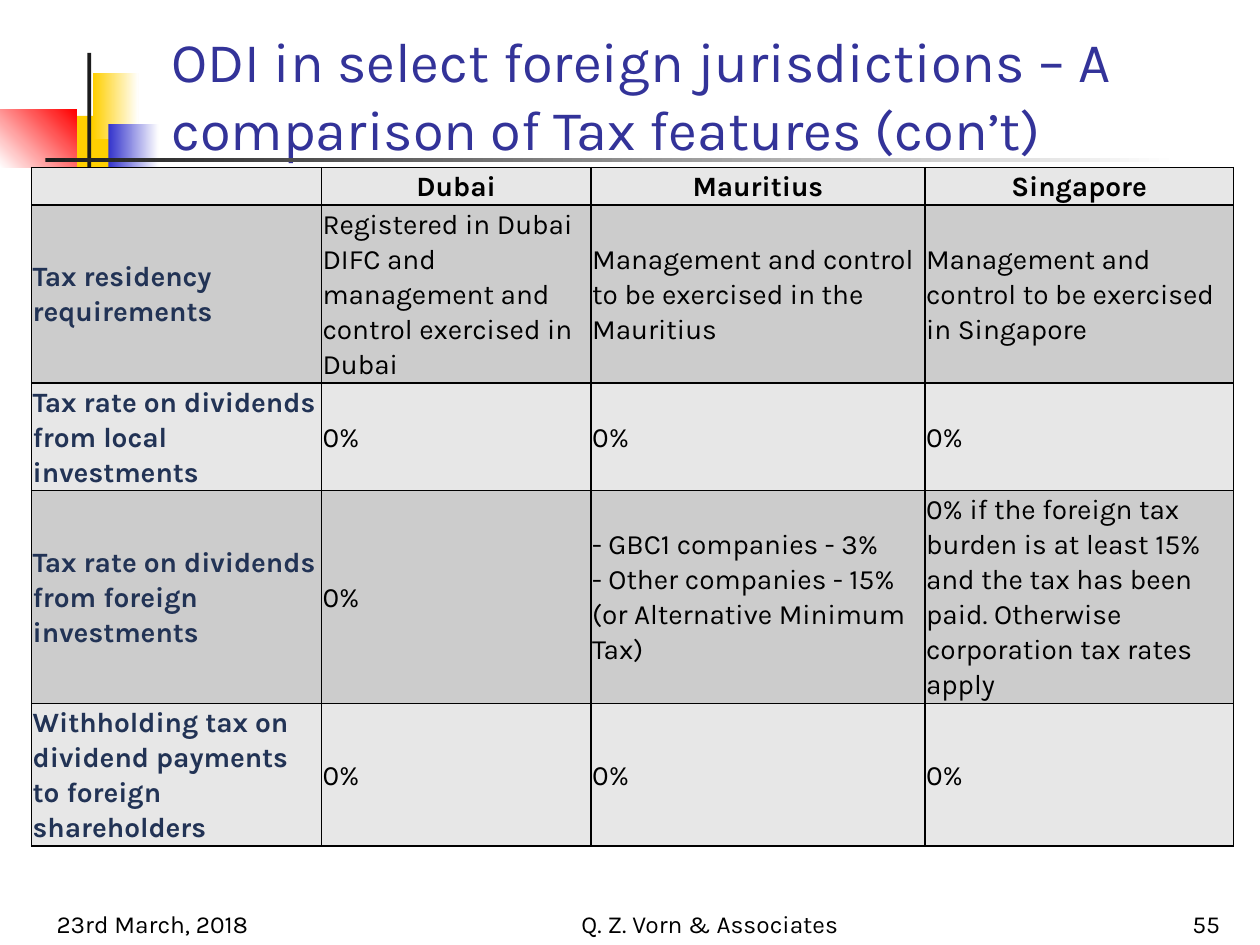
from lxml import etree
from pptx import Presentation
from pptx.dml.color import RGBColor
from pptx.enum.shapes import MSO_SHAPE
from pptx.enum.text import MSO_ANCHOR, MSO_AUTO_SIZE, PP_ALIGN
from pptx.oxml.ns import qn
from pptx.util import Pt

RECT = MSO_SHAPE.RECTANGLE
MIDDLE, BOTTOM = MSO_ANCHOR.MIDDLE, MSO_ANCHOR.BOTTOM
LEFT, CENTER, RIGHT = PP_ALIGN.LEFT, PP_ALIGN.CENTER, PP_ALIGN.RIGHT
NO_FIT = MSO_AUTO_SIZE.NONE

FONT = "Karla"
BLACK = RGBColor(0, 0, 0)
WHITE = RGBColor(255, 255, 255)
INK = RGBColor(0x1C, 0x1C, 0x1C)
YELLOW = RGBColor(0xFF, 0xCF, 0x01)
BLUE = RGBColor(0x33, 0x33, 0xCC)
RED = RGBColor(0xFF, 0, 0)
TITLE_BLUE = RGBColor(0x33, 0x33, 0x99)
NAVY = RGBColor(0x22, 0x33, 0x55)
LIGHT = RGBColor(0xE7, 0xE7, 0xE7)
GREY = RGBColor(0xCC, 0xCC, 0xCC)

TITLE = "ODI in select foreign jurisdictions – A comparison of Tax features (con’t)"
ROWS = [
    ("", "Dubai", "Mauritius", "Singapore"),
    ("Tax residency requirements",
     "Registered in Dubai DIFC and management and control exercised in Dubai",
     "Management and control to be exercised in the Mauritius",
     "Management and control to be exercised in Singapore"),
    ("Tax rate on dividends from local investments", "0%", "0%", "0%"),
    ("Tax rate on dividends from foreign investments",
     "0%",
     "- GBC1 companies - 3%\n- Other companies - 15% (or Alternative Minimum Tax)",
     "0% if the foreign tax burden is at least 15% and the tax has been paid. "
     "Otherwise corporation tax rates apply"),
    ("Withholding tax on dividend payments to foreign shareholders", "0%", "0%", "0%"),
]
COL_WIDTHS = [165.6, 154.1, 190.8, 176.4]
ROW_HEIGHTS = [21.2, 101.6, 61.5, 121.6, 81.5]

DECORATION = [
    ((33.1, 66.2, 34.6, 37.4), (YELLOW,), 0),
    ((42.5, 95.8, 33.1, 37.4), (BLUE,), 0),
    ((53.3, 41.8, 25.9, 37.4), (YELLOW, WHITE), 0),
    ((61.9, 70.6, 28.8, 37.4), (BLUE, WHITE), 0),
    ((0, 62.6, 43.9, 33.1), (WHITE, RED), 45),
    ((49.9, 30.2, 2.2, 82.8), (INK,), 0),
    ((25.9, 90, 648, 2.4), (INK, WHITE), 0),
]
FOOTER = [
    ("23rd March, 2018", 25.2, 149.8, LEFT),
    ("Q. Z. Vorn & Associates", 291.6, 228.2, CENTER),
    ("55", 554.4, 149.8, RIGHT),
]


def add_text(p, text, size, color, bold=False):
    for i, line in enumerate(text.split("\n")):
        if i:
            p.add_line_break()
        r = p.add_run()
        r.text = line
        r.font.name, r.font.size, r.font.bold = FONT, Pt(size), bold
        r.font.color.rgb = color


def add_borders(cell):
    tcPr = cell._tc.get_or_add_tcPr()
    for i, side in enumerate(("lnL", "lnR", "lnT", "lnB")):
        ln = etree.Element(qn("a:" + side), w=str(Pt(1)))
        fill = etree.SubElement(ln, qn("a:solidFill"))
        etree.SubElement(fill, qn("a:srgbClr"), val=str(BLACK))
        tcPr.insert(i, ln)


def add_decoration(s):
    for box, colors, angle in DECORATION:
        sp = s.shapes.add_shape(RECT, *map(Pt, box))
        sp.shadow.inherit = False
        sp.line.fill.background()
        if len(colors) == 1:
            sp.fill.solid()
            sp.fill.fore_color.rgb = colors[0]
        else:
            sp.fill.gradient()
            sp.fill.gradient_angle = angle
            for i, (stop, color) in enumerate(zip(sp.fill.gradient_stops, colors)):
                stop.position, stop.color.rgb = i, color


def add_title(s):
    sp = s.shapes.title
    sp.left, sp.top, sp.width, sp.height = Pt(90.7), Pt(16.6), Pt(613.4), Pt(79.2)
    tf = sp.text_frame
    tf.word_wrap, tf.auto_size, tf.vertical_anchor = True, NO_FIT, BOTTOM
    p = tf.paragraphs[0]
    p.alignment = LEFT
    add_text(p, TITLE, 32, TITLE_BLUE)


def add_table(s):
    table = s.shapes.add_table(len(ROWS), len(COL_WIDTHS), Pt(18), Pt(95.8),
                               Pt(sum(COL_WIDTHS)), Pt(sum(ROW_HEIGHTS))).table
    for col, width in zip(table.columns, COL_WIDTHS):
        col.width = Pt(width)
    for i, texts in enumerate(ROWS):
        table.rows[i].height = Pt(ROW_HEIGHTS[i])
        for j, text in enumerate(texts):
            cell = table.cell(i, j)
            cell.margin_left = cell.margin_right = Pt(0.72)
            cell.margin_top = cell.margin_bottom = Pt(0.72)
            cell.vertical_anchor = MIDDLE
            cell.fill.solid()
            cell.fill.fore_color.rgb = GREY if i % 2 else LIGHT
            add_borders(cell)
            p = cell.text_frame.paragraphs[0]
            p.alignment = LEFT if i else CENTER
            p.line_spacing = 1.07
            if text:
                add_text(p, text, 16, BLACK if j else NAVY, i == 0 or j == 0)
            else:
                etree.SubElement(p._p, qn("a:endParaRPr"), sz="1600")


def add_footer(s):
    for text, left, width, align in FOOTER:
        tf = s.shapes.add_textbox(Pt(left), Pt(504), Pt(width), Pt(36)).text_frame
        tf.word_wrap, tf.vertical_anchor = True, BOTTOM
        p = tf.paragraphs[0]
        p.alignment = align
        add_text(p, text, 14, BLACK)


def main():
    prs = Presentation()
    prs.slide_width, prs.slide_height = Pt(720), Pt(540)
    s = prs.slides.add_slide(prs.slide_layouts[5])
    add_decoration(s)
    add_title(s)
    add_table(s)
    add_footer(s)
    prs.save("out.pptx")


if __name__ == "__main__":
    main()
